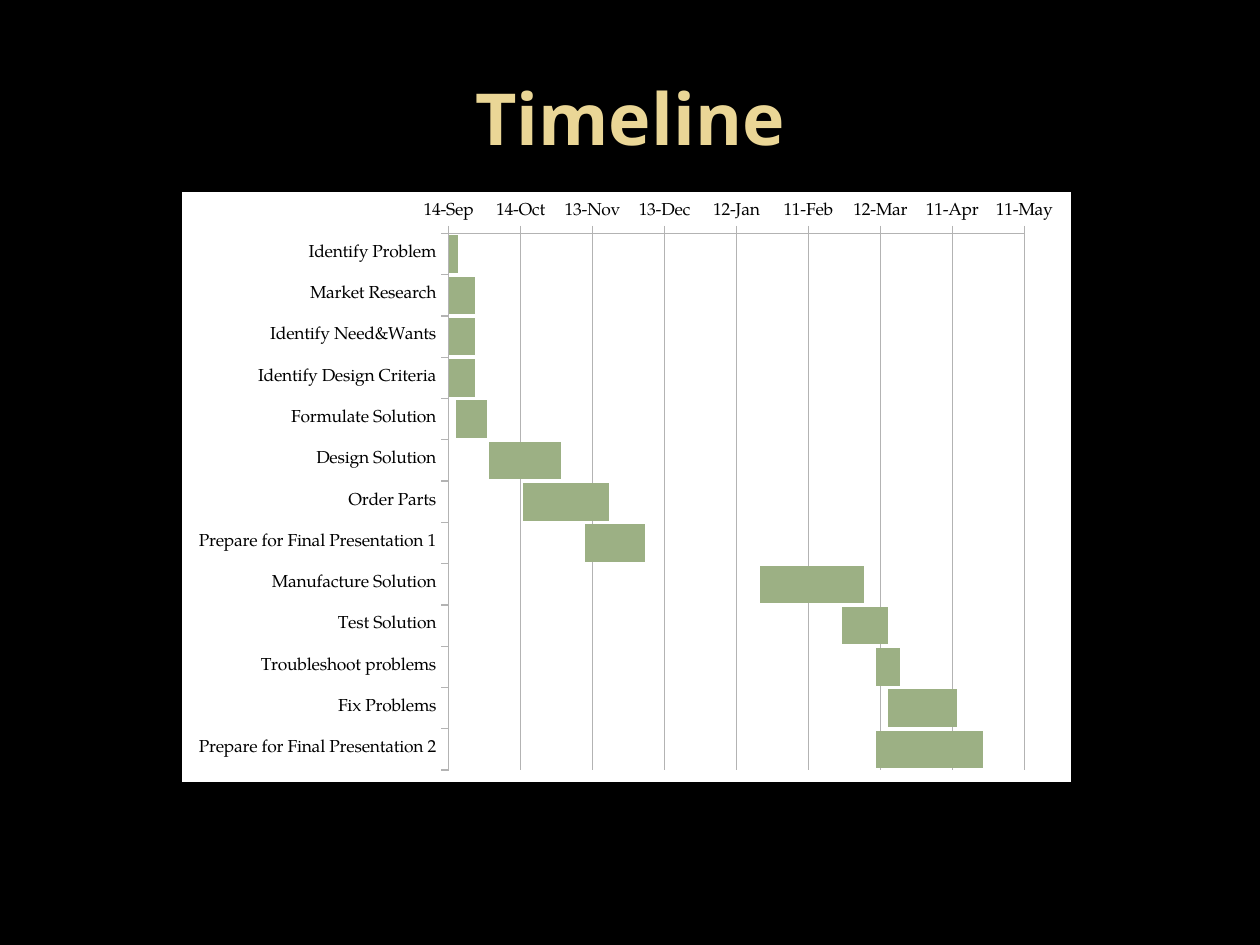
from pptx import Presentation
from pptx.chart.data import CategoryChartData
from pptx.dml.color import RGBColor
from pptx.enum.chart import XL_CHART_TYPE as ChartType, XL_TICK_MARK as TickMark
from pptx.enum.text import MSO_ANCHOR as Anchor, PP_ALIGN as Align
from pptx.oxml import parse_xml
from pptx.oxml.ns import nsdecls, qn
from pptx.util import Pt

COLORS = {"background": "000000", "title": "EAD696", "panel": "FFFFFF",
          "text": "000000", "bar": "9CB084", "line": "B3B3B3"}
TITLE_FONT = "Noto Sans"
CHART_FONT = "TeX Gyre Pagella"
SCALE = 914400 / 126

SLIDE_SIZE = (1260, 945)
TITLE_BOX = (63, 38, 1134, 158)
CHART_BOX = (179, 189, 896, 597)
PLOT_BOX = (448, 232, 578, 540)

FIRST_DAY = 42261
DAYS_PER_STEP = 30
STEPS = 8
TASKS = [
    ("Identify Problem", 42261, 4),
    ("Market Research", 42261, 11),
    ("Identify Need&Wants", 42261, 11),
    ("Identify Design Criteria", 42261, 11),
    ("Formulate Solution", 42264, 13),
    ("Design Solution", 42278, 30),
    ("Order Parts", 42292, 36),
    ("Prepare for Final Presentation 1", 42318, 25),
    ("Manufacture Solution", 42391, 43),
    ("Test Solution", 42425, 19),
    ("Troubleshoot problems", 42439, 10),
    ("Fix Problems", 42444, 29),
    ("Prepare for Final Presentation 2", 42439, 45),
]


def px(value):
    return round(value * SCALE)


def color(name):
    return RGBColor.from_string(COLORS[name])


def add_title(slide):
    title = slide.shapes.title
    title.left, title.top, title.width, title.height = map(px, TITLE_BOX)
    title.text_frame.vertical_anchor = Anchor.MIDDLE
    paragraph = title.text_frame.paragraphs[0]
    paragraph.alignment = Align.CENTER
    run = paragraph.add_run()
    run.text = "Timeline"
    run.font.name = TITLE_FONT
    run.font.size = Pt(41)
    run.font.bold = True
    run.font.color.rgb = color("title")


def style_panel(chart):
    chart._chartSpace.find(qn("c:chart")).addnext(parse_xml(
        f'<c:spPr {nsdecls("c", "a")}>'
        f'<a:solidFill><a:srgbClr val="{COLORS["panel"]}"/></a:solidFill>'
        f'<a:ln w="{Pt(2)}"><a:solidFill><a:srgbClr val="{COLORS["background"]}"/>'
        '</a:solidFill></a:ln></c:spPr>'))


def place_plot(chart):
    left, top, width, height = CHART_BOX
    plot_left, plot_top, plot_width, plot_height = PLOT_BOX
    fractions = {"x": (plot_left - left) / width, "y": (plot_top - top) / height,
                 "w": plot_width / width, "h": plot_height / height}
    values = "".join(f'<c:{key} val="{value:.4f}"/>' for key, value in fractions.items())
    plot_area = chart._chartSpace.chart.plotArea
    for layout in plot_area.findall(qn("c:layout")):
        plot_area.remove(layout)
    plot_area.insert(0, parse_xml(
        f'<c:layout {nsdecls("c")}><c:manualLayout><c:layoutTarget val="inner"/>'
        f'<c:xMode val="edge"/><c:yMode val="edge"/>{values}'
        '</c:manualLayout></c:layout>'))


def style_line(line):
    line.color.rgb = color("line")
    line.width = Pt(0.75)


def style_axes(chart):
    tasks, dates = chart.category_axis, chart.value_axis
    for axis in (tasks, dates):
        axis.major_tick_mark = TickMark.OUTSIDE
        axis.minor_tick_mark = TickMark.NONE
        style_line(axis.format.line)
    tasks.reverse_order = True
    tasks.has_major_gridlines = False
    dates.minimum_scale = FIRST_DAY
    dates.maximum_scale = FIRST_DAY + STEPS * DAYS_PER_STEP
    dates.major_unit = DAYS_PER_STEP
    dates.has_major_gridlines = True
    style_line(dates.major_gridlines.format.line)
    dates.tick_labels.number_format = "d\\-mmm"
    dates.tick_labels.number_format_is_linked = False


def add_timeline(slide):
    names, starts, durations = zip(*TASKS)
    data = CategoryChartData()
    data.categories = names
    data.add_series("Series 1", starts)
    data.add_series("Series 2", durations)
    chart = slide.shapes.add_chart(
        ChartType.BAR_STACKED, *map(px, CHART_BOX), data).chart
    chart.has_legend = False
    chart.has_title = False
    chart.font.name = CHART_FONT
    chart.font.size = Pt(10)
    chart.font.color.rgb = color("text")
    plot = chart.plots[0]
    plot.gap_width = 10
    plot.overlap = 100
    plot.vary_by_categories = False
    start_series, duration_series = plot.series
    start_series.format.fill.background()
    start_series.format.line.fill.background()
    duration_series.format.fill.solid()
    duration_series.format.fill.fore_color.rgb = color("bar")
    style_axes(chart)
    style_panel(chart)
    place_plot(chart)


def main():
    presentation = Presentation()
    presentation.slide_width, presentation.slide_height = map(px, SLIDE_SIZE)
    slide = presentation.slides.add_slide(presentation.slide_layouts[5])
    slide.background.fill.solid()
    slide.background.fill.fore_color.rgb = color("background")
    add_title(slide)
    add_timeline(slide)
    presentation.save("out.pptx")


if __name__ == "__main__":
    main()
